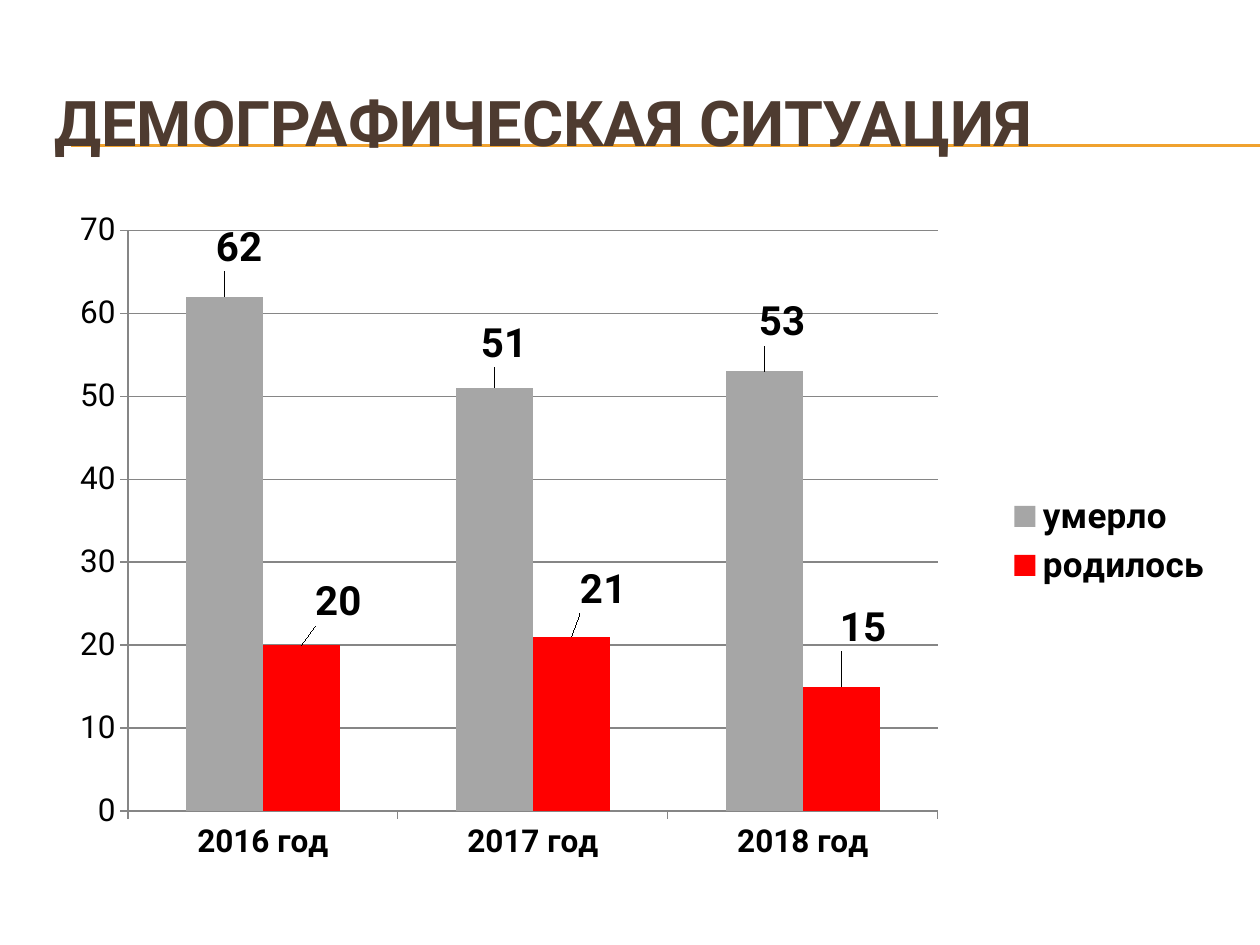
from dataclasses import dataclass

from lxml.etree import SubElement
from pptx import Presentation
from pptx.chart.chart import Chart
from pptx.chart.data import CategoryChartData
from pptx.dml.color import RGBColor
from pptx.enum.chart import XL_CHART_TYPE, XL_LABEL_POSITION, XL_LEGEND_POSITION, XL_TICK_MARK
from pptx.enum.shapes import MSO_CONNECTOR
from pptx.enum.text import MSO_ANCHOR
from pptx.oxml import parse_xml
from pptx.oxml.ns import nsdecls, qn
from pptx.slide import Slide
from pptx.util import Emu, Pt

FONT = "Roboto"
BROWN = RGBColor(0x4E, 0x3B, 0x30)
ORANGE = RGBColor(0xF0, 0xA2, 0x2E)
GRAY = RGBColor(0xA6, 0xA6, 0xA6)
RED = RGBColor(0xFF, 0x00, 0x00)
BLACK = RGBColor(0x00, 0x00, 0x00)
AXIS_GRAY = RGBColor(0x86, 0x86, 0x86)
CHART_WIDTH, CHART_HEIGHT = 1191, 674
YEARS = ("2016 год", "2017 год", "2018 год")


@dataclass(frozen=True)
class Group:
    name: str
    values: tuple[int, ...]
    color: RGBColor
    label_shifts: tuple[tuple[int, int], ...]


GROUPS = (
    Group("умерло", (62, 51, 53), GRAY, ((15, -20), (10, -15), (18, -20))),
    Group("родилось", (20, 21, 15), RED, ((37, -14), (32, -18), (22, -30))),
)


def px(length: int) -> Emu:
    return Emu(round(length * 914400 / 126))


def add_rule(page: Slide, top: int) -> None:
    rule = page.shapes.add_connector(MSO_CONNECTOR.STRAIGHT, px(71), px(top), px(1260), px(top))
    rule.line.color.rgb = ORANGE
    rule.line.width = Pt(0.75)
    SubElement(rule._element.spPr, qn("a:effectLst"))


def add_title(page: Slide, text: str) -> None:
    box = page.shapes.add_textbox(px(42), px(63), px(1197), px(116))
    frame = box.text_frame
    frame.word_wrap = True
    frame.vertical_anchor = MSO_ANCHOR.MIDDLE
    frame.text = text
    font = frame.paragraphs[0].runs[0].font
    font.name, font.size, font.bold = FONT, Pt(36), True
    font.color.rgb = BROWN


def manual_layout(settings: dict[str, str | float]) -> object:
    items = "".join(f'<c:{key} val="{value}"/>' for key, value in settings.items())
    return parse_xml(
        f'<c:layout {nsdecls("c")}><c:manualLayout>{items}</c:manualLayout></c:layout>'
    )


def place_plot(chart: Chart) -> None:
    area = chart._chartSpace.chart.plotArea
    for layout in area.findall(qn("c:layout")):
        area.remove(layout)
    area.insert(0, manual_layout({
        "layoutTarget": "inner", "xMode": "edge", "yMode": "edge",
        "x": 0.078, "y": 0.039, "w": 0.68, "h": 0.862,
    }))


def style_series(chart: Chart) -> None:
    for group, series in zip(GROUPS, chart.plots[0].series):
        series.format.fill.solid()
        series.format.fill.fore_color.rgb = group.color
        series.invert_if_negative = False
        for index, (right, down) in enumerate(group.label_shifts):
            label = series.points[index].data_label
            label.font.name, label.font.size, label.font.bold = FONT, Pt(23), True
            label.font.color.rgb = BLACK
            label.position = XL_LABEL_POSITION.OUTSIDE_END
        for element, (right, down) in zip(series._element.iter(qn("c:dLbl")), group.label_shifts):
            element.insert(1, manual_layout({
                "x": round(right / CHART_WIDTH, 4), "y": round(down / CHART_HEIGHT, 4),
            }))


def style_axes(chart: Chart) -> None:
    for axis in (chart.category_axis, chart.value_axis):
        axis.major_tick_mark = XL_TICK_MARK.OUTSIDE
        axis.minor_tick_mark = XL_TICK_MARK.NONE
        axis.format.line.color.rgb = AXIS_GRAY
        axis.format.line.width = Pt(0.75)
        axis.tick_labels.font.size = Pt(18)
    chart.category_axis.tick_labels.font.bold = True
    scale = chart.value_axis
    scale.minimum_scale, scale.maximum_scale, scale.major_unit = 0, 70, 10
    scale.has_major_gridlines = True
    scale.major_gridlines.format.line.color.rgb = AXIS_GRAY
    scale.major_gridlines.format.line.width = Pt(0.75)


def add_population_chart(page: Slide) -> None:
    data = CategoryChartData()
    data.categories = YEARS
    for group in GROUPS:
        data.add_series(group.name, group.values)
    chart = page.shapes.add_chart(
        XL_CHART_TYPE.COLUMN_CLUSTERED,
        px(35), px(204), px(CHART_WIDTH), px(CHART_HEIGHT), data,
    ).chart
    chart.has_title = False
    chart.font.name, chart.font.size = FONT, Pt(18)
    chart.font.color.rgb = BLACK
    chart.plots[0].gap_width = 150
    chart.plots[0].overlap = 0
    chart.plots[0].vary_by_categories = False
    chart.has_legend = True
    chart.legend.position = XL_LEGEND_POSITION.RIGHT
    chart.legend.include_in_layout = False
    chart.legend.font.size, chart.legend.font.bold = Pt(20), True
    style_axes(chart)
    style_series(chart)
    place_plot(chart)


def main() -> None:
    deck = Presentation()
    deck.slide_width, deck.slide_height = px(1260), px(945)
    page = deck.slides.add_slide(deck.slide_layouts[6])
    for top in (145, 146):
        add_rule(page, top)
    add_title(page, "ДЕМОГРАФИЧЕСКАЯ СИТУАЦИЯ")
    add_population_chart(page)
    deck.save("out.pptx")


if __name__ == "__main__":
    main()
